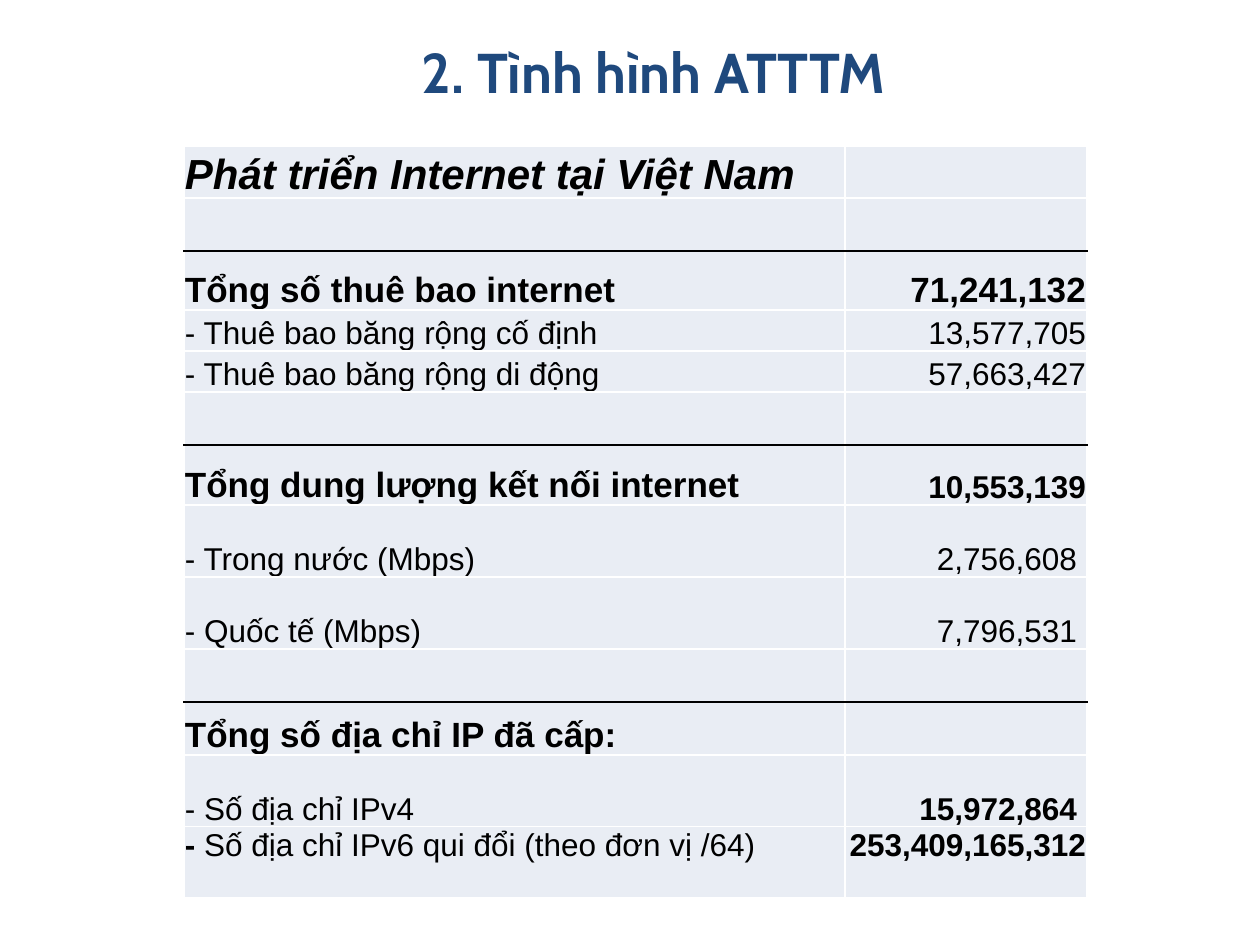
"""Build the slide on internet development in Vietnam."""
from lxml import etree
from pptx import Presentation
from pptx.dml.color import RGBColor
from pptx.enum.text import MSO_ANCHOR, PP_ALIGN
from pptx.oxml.ns import qn
from pptx.util import Pt

PX = 914400 // 126
LEFT, CENTER, RIGHT = PP_ALIGN.LEFT, PP_ALIGN.CENTER, PP_ALIGN.RIGHT
TOP, MIDDLE, BOTTOM = MSO_ANCHOR.TOP, MSO_ANCHOR.MIDDLE, MSO_ANCHOR.BOTTOM
COLORS = {"title": "1F497D", "text": "000000", "cell": "E9EDF4",
          "grid": "FFFFFF", "rule": "000000"}


def write(frame, text, size=18, bold=False, italic=False, align=LEFT,
          font="Arial", color="text"):
    paragraph = frame.paragraphs[0]
    paragraph.alignment = align
    run = paragraph.add_run()
    run.text = text
    run.font.size = Pt(size)
    run.font.bold = bold
    run.font.italic = italic
    run.font.name = font
    run.font.color.rgb = RGBColor.from_string(COLORS[color])


def add_border(cell, side, color):
    line = etree.SubElement(cell._tc.get_or_add_tcPr(), qn("a:" + side), w=str(Pt(1)))
    fill = etree.SubElement(line, qn("a:solidFill"))
    etree.SubElement(fill, qn("a:srgbClr"), val=COLORS[color])


prs = Presentation()
prs.slide_width, prs.slide_height = 1260 * PX, 945 * PX
slide = prs.slides.add_slide(prs.slide_layouts[6])

title = slide.shapes.add_textbox(312 * PX, 37 * PX, 684 * PX, 69 * PX).text_frame
title.word_wrap = True
title.vertical_anchor = MIDDLE
write(title, "2. Tình hình ATTTM", size=32, bold=True, align=CENTER,
      font="Cabin", color="title")

HEADING = {"size": 24, "bold": True, "italic": True}
TOTAL = {"size": 20, "bold": True}
STRONG = {"bold": True}
PLAIN = {}
rows = [
    (52, [("Phát triển Internet tại Việt Nam", HEADING)], "", PLAIN),
    (53, [], "", PLAIN),
    (59, [("Tổng số thuê bao internet", TOTAL)], "71,241,132", TOTAL),
    (41, [("- Thuê bao băng rộng cố định", PLAIN)], "13,577,705", PLAIN),
    (41, [("- Thuê bao băng rộng di động", PLAIN)], "57,663,427", PLAIN),
    (53, [], "", PLAIN),
    (60, [("Tổng dung lượng kết nối internet", TOTAL)], "10,553,139", STRONG),
    (72, [("- Trong nước (Mbps)", PLAIN)], "2,756,608", PLAIN),
    (72, [("- Quốc tế (Mbps)", PLAIN)], "7,796,531", PLAIN),
    (53, [], "", PLAIN),
    (53, [("Tổng số địa chỉ IP đã cấp:", TOTAL)], "", PLAIN),
    (72, [("- Số địa chỉ IPv4", PLAIN)], "15,972,864", STRONG),
    (71, [("- ", STRONG), ("Số địa chỉ IPv6 qui đổi (theo đơn vị /64)", PLAIN)],
     "253,409,165,312", STRONG),
]
ruled_rows = (1, 5, 9)
indented_rows = (7, 8, 11)
last_row = len(rows) - 1

statistics = slide.shapes.add_table(
    len(rows), 2, 184 * PX, 146 * PX, 903 * PX, sum(row[0] for row in rows) * PX).table
statistics.first_row = False
statistics.horz_banding = False
for column, width in zip(statistics.columns, (661, 242)):
    column.width = width * PX

for index, (height, label, value, value_format) in enumerate(rows):
    statistics.rows[index].height = height * PX
    above = "rule" if index - 1 in ruled_rows else "grid"
    below = "rule" if index in ruled_rows else "grid"
    for cell in statistics.rows[index].cells:
        for side, color in (("lnL", "grid"), ("lnR", "grid"), ("lnT", above), ("lnB", below)):
            add_border(cell, side, color)
        cell.fill.solid()
        cell.fill.fore_color.rgb = RGBColor.from_string(COLORS["cell"])
        cell.margin_left = cell.margin_right = cell.margin_top = PX
        cell.margin_bottom = 0
        cell.vertical_anchor = TOP if index == last_row else BOTTOM
    label_cell, value_cell = statistics.rows[index].cells
    for text, text_format in label:
        write(label_cell.text_frame, text, **text_format)
    if value:
        write(value_cell.text_frame, value, align=RIGHT, **value_format)
    if index in indented_rows:
        value_cell.margin_right = 10 * PX

prs.save("out.pptx")
